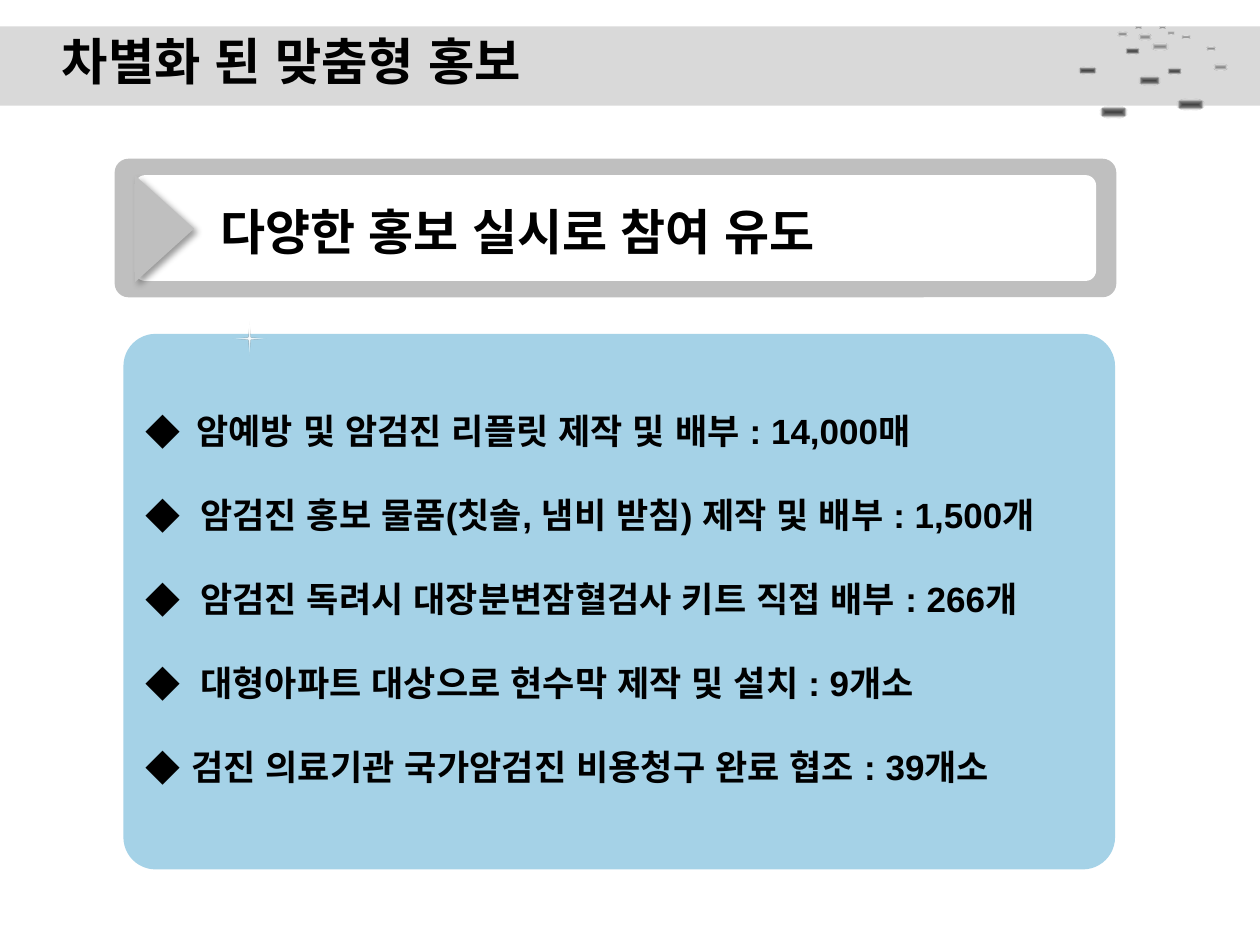
"""Build the slide on tailored promotion of cancer screening."""
from typing import NamedTuple

from lxml import etree
from pptx import Presentation
from pptx import util as u
from pptx.dml.color import RGBColor
from pptx.enum import shapes, text
from pptx.oxml import ns, parse_xml

LATIN = "Arial"
HANGUL = "Noto Sans CJK KR"
DARK = ("404040", "808080")
LIGHT = ("808080", "BFBFBF")


class Dot(NamedTuple):
    left: float
    top: float
    width: float
    height: float
    tones: tuple[str, str]


class Item(NamedTuple):
    wording: str
    tab: float = 0.43


DOTS = [
    Dot(8.56, 0.53, 0.14, 0.06, DARK),
    Dot(8.73, 0.84, 0.22, 0.10, DARK),
    Dot(9.34, 0.78, 0.22, 0.10, DARK),
    Dot(9.04, 0.60, 0.17, 0.08, DARK),
    Dot(8.93, 0.38, 0.11, 0.05, DARK),
    Dot(9.27, 0.54, 0.11, 0.05, DARK),
    Dot(9.63, 0.51, 0.11, 0.05, LIGHT),
    Dot(9.58, 0.37, 0.07, 0.03, LIGHT),
    Dot(9.38, 0.28, 0.07, 0.03, LIGHT),
    Dot(9.14, 0.34, 0.13, 0.06, LIGHT),
    Dot(9.04, 0.27, 0.10, 0.05, LIGHT),
    Dot(8.87, 0.25, 0.08, 0.04, LIGHT),
    Dot(9.01, 0.21, 0.05, 0.02, LIGHT),
    Dot(9.27, 0.25, 0.05, 0.02, LIGHT),
    Dot(9.20, 0.21, 0.05, 0.02, LIGHT),
]

ITEMS = [
    Item("암예방 및 암검진 리플릿 제작 및 배부 : 14,000매", 0.4),
    Item("암검진 홍보 물품(칫솔, 냄비 받침) 제작 및 배부 : 1,500개"),
    Item("암검진 독려시 대장분변잠혈검사 키트 직접 배부 : 266개"),
    Item("대형아파트 대상으로 현수막 제작 및 설치 : 9개소"),
    Item("검진 의료기관 국가암검진 비용청구 완료 협조 : 39개소", 0.36),
]


def color(value: str) -> RGBColor:
    """Turn a hex string into a colour."""
    return RGBColor.from_string(value)


def add_shape(slide, kind, left: float, top: float, width: float, height: float,
              fill: str = "FFFFFF", corner: float | None = None):
    """Add a borderless preset shape with a plain fill."""
    shape = slide.shapes.add_shape(
        kind, u.Inches(left), u.Inches(top), u.Inches(width), u.Inches(height))
    shape.shadow.inherit = False
    shape.fill.solid()
    shape.fill.fore_color.rgb = color(fill)
    shape.line.fill.background()
    if corner is not None:
        shape.adjustments[0] = corner
    return shape


def set_radial_fill(shape, kind: str, stops: list[tuple[int, str, int]]) -> None:
    """Fill a shape outward from its centre with (position, colour, opacity) stops."""
    marks = "".join(
        f'<a:gs pos="{position * 1000}"><a:srgbClr val="{value}">'
        f'<a:alpha val="{opacity * 1000}"/></a:srgbClr></a:gs>'
        for position, value, opacity in stops)
    gradient = parse_xml(
        f'<a:gradFill {ns.nsdecls("a")} rotWithShape="1"><a:gsLst>{marks}</a:gsLst>'
        f'<a:path path="{kind}"><a:fillToRect l="50000" t="50000" r="50000" b="50000"/>'
        '</a:path></a:gradFill>')
    properties = shape.element.spPr
    properties.replace(properties.find(ns.qn("a:solidFill")), gradient)


def add_shadow(shape) -> None:
    """Give a shape a soft shadow to the lower right."""
    effects = shape.element.spPr.find(ns.qn("a:effectLst"))
    effects.append(parse_xml(
        f'<a:outerShdw {ns.nsdecls("a")} blurRad="{u.Pt(4)}" dist="{u.Pt(3)}" '
        'dir="2700000" algn="tl" rotWithShape="0"><a:srgbClr val="000000">'
        '<a:alpha val="40000"/></a:srgbClr></a:outerShdw>'))


def add_text_box(slide, left: float, top: float, width: float, height: float,
                 inset: float = 0.1):
    """Add a wrapping text box and return its frame."""
    box = slide.shapes.add_textbox(
        u.Inches(left), u.Inches(top), u.Inches(width), u.Inches(height))
    frame = box.text_frame
    frame.word_wrap = True
    frame.margin_left = u.Inches(inset)
    return frame


def write(paragraph, wording: str, size: float, font: str = LATIN) -> None:
    """Write bold black text, with the plain font for East Asian spacing."""
    paragraph.text = wording
    paragraph.font.size = u.Pt(size)
    paragraph.font.bold = True
    paragraph.font.name = font
    paragraph.font.color.rgb = color("000000")
    for run in paragraph.runs:
        east_asian = etree.SubElement(run.font._element, ns.qn("a:ea"))
        east_asian.set("typeface", LATIN)


def add_bullet(paragraph, tab: float) -> None:
    """Add a diamond bullet and the tab stop where the text begins."""
    properties = paragraph._p.get_or_add_pPr()
    properties.set("marL", "0")
    properties.set("indent", "0")
    etree.SubElement(properties, ns.qn("a:buFont")).set("typeface", HANGUL)
    etree.SubElement(properties, ns.qn("a:buChar")).set("char", "◆")
    stops = etree.SubElement(properties, ns.qn("a:tabLst"))
    stop = etree.SubElement(stops, ns.qn("a:tab"))
    stop.set("pos", str(u.Inches(tab)))
    stop.set("algn", "l")


def add_header(slide) -> None:
    """Draw the title band with its scattered dots."""
    add_shape(slide, shapes.MSO_SHAPE.RECTANGLE, 0, 0.21, 10, 0.63, "D9D9D9")
    for dot in DOTS:
        shape = add_shape(slide, shapes.MSO_SHAPE.OVAL, *dot[:4])
        inner, middle = dot.tones
        set_radial_fill(shape, "shape",
                        [(0, inner, 100), (50, middle, 100), (100, "FFFFFF", 0)])
    frame = add_text_box(slide, 0.28, 0.21, 9.22, 0.54, inset=0.21)
    frame.vertical_anchor = text.MSO_ANCHOR.MIDDLE
    write(frame.paragraphs[0], "차별화 된 맞춤형 홍보", 28.8)


def add_banner(slide) -> None:
    """Draw the framed subtitle with its arrowhead."""
    rounded = shapes.MSO_SHAPE.ROUNDED_RECTANGLE
    add_shape(slide, rounded, 0.91, 1.26, 7.95, 1.1, "BFBFBF", 0.1)
    add_shape(slide, rounded, 1.07, 1.39, 7.63, 0.84, "FFFFFF", 0.1)
    arrow = add_shape(slide, shapes.MSO_SHAPE.ISOSCELES_TRIANGLE,
                      0.88, 1.58, 0.85, 0.47, "BFBFBF")
    arrow.rotation = 90
    add_shadow(arrow)
    frame = add_text_box(slide, 1.54, 1.55, 7.27, 0.57, inset=0.21)
    write(frame.paragraphs[0], "다양한 홍보 실시로 참여 유도", 28, HANGUL)


def add_panel(slide) -> None:
    """Draw the blue panel, its bullet list and the sparkle."""
    add_shape(slide, shapes.MSO_SHAPE.ROUNDED_RECTANGLE,
              0.98, 2.65, 7.87, 4.25, "A5D2E7", 0.06)
    frame = add_text_box(slide, 1.06, 3.2, 7.72, 3.13)
    for index, item in enumerate(ITEMS):
        paragraph = frame.add_paragraph() if index else frame.paragraphs[0]
        add_bullet(paragraph, item.tab)
        write(paragraph, "\t" + item.wording, 20)
        paragraph.line_spacing = u.Pt(24)
        if index:
            paragraph.space_before = u.Pt(24)
    sparkle = add_shape(slide, shapes.MSO_SHAPE.STAR_4_POINT,
                        1.83, 2.54, 0.3, 0.3, corner=0.04)
    set_radial_fill(sparkle, "circle",
                    [(0, "FFFFFF", 100), (66, "FFFFFF", 0), (100, "FFFFFF", 0)])


def main() -> None:
    """Build and save the presentation."""
    presentation = Presentation()
    presentation.slide_width = u.Inches(10)
    presentation.slide_height = u.Inches(7.5)
    slide = presentation.slides.add_slide(presentation.slide_layouts[6])
    add_header(slide)
    add_banner(slide)
    add_panel(slide)
    presentation.save("out.pptx")


if __name__ == "__main__":
    main()
